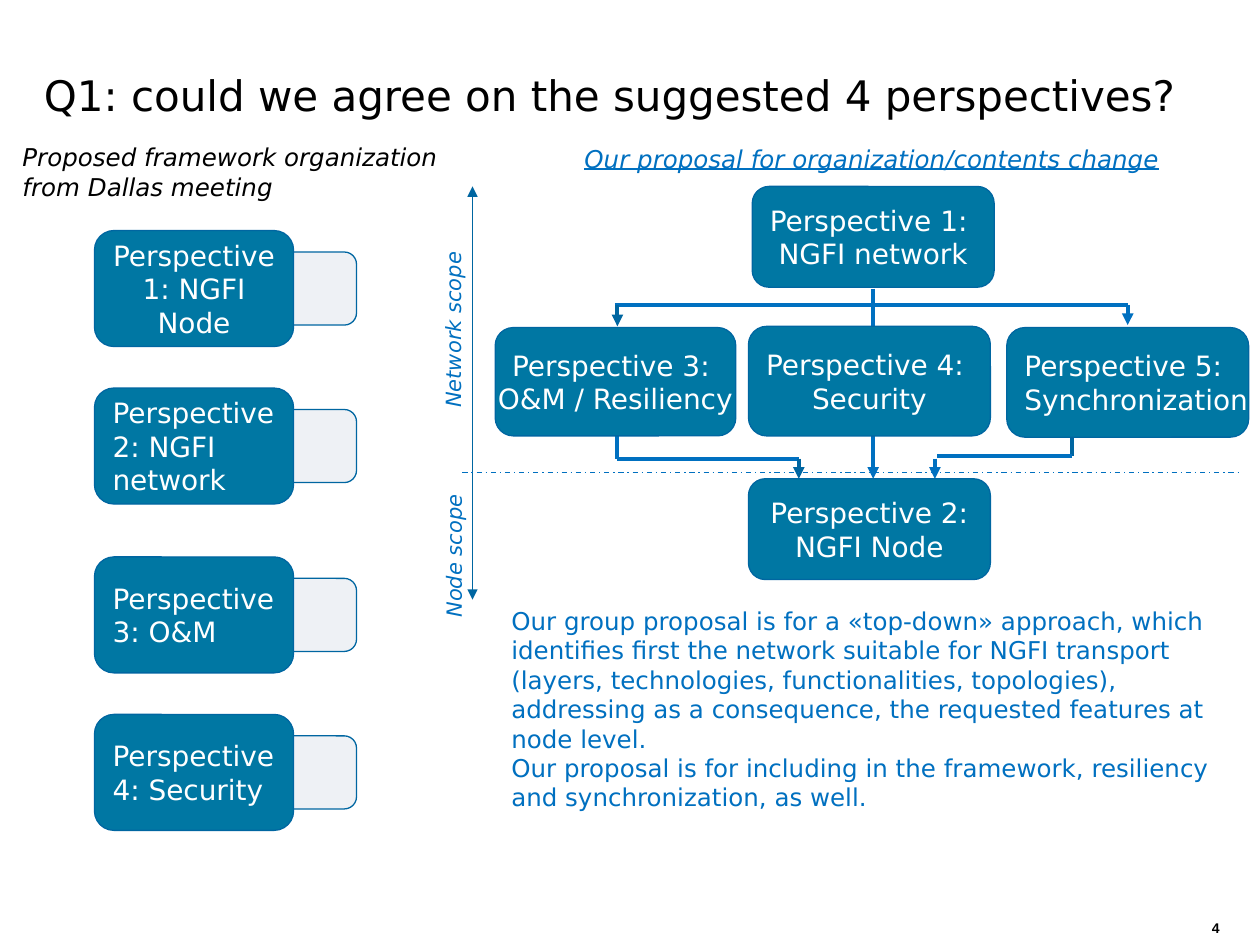
"""Build the slide that compares two ways of organizing the NGFI perspectives."""
from lxml import etree
from pptx import Presentation
from pptx.dml.color import RGBColor
from pptx.enum.dml import MSO_LINE
from pptx.enum.shapes import MSO_CONNECTOR, MSO_SHAPE
from pptx.enum.text import MSO_ANCHOR, PP_ALIGN
from pptx.oxml.ns import qn
from pptx.util import Pt

PX = 9144
BLACK = RGBColor(0x00, 0x00, 0x00)
WHITE = RGBColor(0xFF, 0xFF, 0xFF)
BLUE = RGBColor(0x00, 0x70, 0xC0)
NAVY = RGBColor(0x00, 0x66, 0xA1)
TEAL = RGBColor(0x00, 0x77, 0xA3)
PALE = RGBColor(0xEE, 0xF1, 0xF5)
LEFT, CENTER = PP_ALIGN.LEFT, PP_ALIGN.CENTER
TOP, MIDDLE, BOTTOM = MSO_ANCHOR.TOP, MSO_ANCHOR.MIDDLE, MSO_ANCHOR.BOTTOM
ROUNDED = MSO_SHAPE.ROUNDED_RECTANGLE
STRAIGHT = MSO_CONNECTOR.STRAIGHT
DASH_DOT = MSO_LINE.DASH_DOT

prs = Presentation()
prs.slide_width, prs.slide_height = 1000 * PX, 750 * PX
slide = prs.slides.add_slide(prs.slide_layouts[6])
shapes = slide.shapes


def write(shape, lines, size, color, aligns=(LEFT,), anchor=TOP, wrap=False,
          font="DejaVu Sans", italic=False):
    frame = shape.text_frame
    frame.word_wrap = wrap
    frame.vertical_anchor = anchor
    for i, line in enumerate(lines):
        paragraph = frame.paragraphs[0] if i == 0 else frame.add_paragraph()
        paragraph.text = line
        paragraph.alignment = aligns[min(i, len(aligns) - 1)]
        paragraph.font.name = font
        paragraph.font.size = Pt(size)
        paragraph.font.color.rgb = color
        paragraph.font.italic = italic
    return frame


def add_box(place, fill):
    box = shapes.add_shape(ROUNDED, *(v * PX for v in place))
    box.shadow.inherit = False
    box.fill.solid()
    box.fill.fore_color.rgb = fill
    box.line.color.rgb = NAVY
    box.line.width = Pt(0.75)
    return box


title = shapes.add_textbox(25 * PX, 17 * PX, 941 * PX, 83 * PX)
write(title, ["Q1: could we agree on the suggested 4 perspectives?"], 24, BLACK,
      anchor=BOTTOM, wrap=True)

page_number = shapes.add_textbox(952 * PX, 725 * PX, 48 * PX, 25 * PX)
write(page_number, ["4"], 8, BLACK, wrap=True, font="Arial").paragraphs[0].font.bold = True

dallas_heading = shapes.add_textbox(8 * PX, 108 * PX, 359 * PX, 57 * PX)
write(dallas_heading, ["Proposed framework organization", "from Dallas meeting"],
      14, BLACK, italic=True)

proposal_heading = shapes.add_textbox(447 * PX, 109 * PX, 490 * PX, 34 * PX)
write(proposal_heading, ["Our proposal for organization/contents change"], 14, BLUE,
      (CENTER,), italic=True).paragraphs[0].font.underline = True

dallas_perspectives = [
    (183, ["Perspective", "1: NGFI", "Node"], CENTER),
    (308, ["Perspective", "2: NGFI", "network"], LEFT),
    (442, ["Perspective", "3: O&M"], LEFT),
    (567, ["Perspective", "4: Security"], LEFT),
]
for top, lines, align in dallas_perspectives:
    add_box((183, top + 17, 100, 58), PALE)
    write(add_box((75, top, 158, 92), TEAL), lines, 16, WHITE, (align,), MIDDLE)

links = [
    (693, 229, 693, 380, BLUE, 2.25, True),
    (488, 242, 895, 242, BLUE, 2.25, False),
    (490, 242, 490, 259, NAVY, 2.25, True),
    (895, 242, 895, 258, BLUE, 2.25, True),
    (490, 364, 490, 346, BLUE, 2.25, False),
    (490, 364, 634, 364, BLUE, 2.25, False),
    (634, 364, 634, 380, NAVY, 2.25, True),
    (851, 362, 851, 346, NAVY, 2.25, False),
    (744, 362, 851, 362, BLUE, 2.25, False),
    (742, 364, 742, 380, BLUE, 2.25, True),
    (375, 375, 375, 148, NAVY, 0.75, True),
    (375, 375, 375, 476, NAVY, 0.75, True),
    (367, 375, 983, 375, BLUE, 0.75, False),
]
for *ends, color, width, arrow in links:
    link = shapes.add_connector(STRAIGHT, *(v * PX for v in ends))
    link.line.color.rgb = color
    link.line.width = Pt(width)
    if arrow:
        etree.SubElement(link.line._get_or_add_ln(), qn("a:tailEnd"), type="triangle")
    etree.SubElement(link._element.spPr, qn("a:effectLst"))
scope_divider = link
scope_divider.line.dash_style = DASH_DOT

proposed_perspectives = [
    ((597, 148, 192, 80), ["Perspective 1: ", "NGFI network"], CENTER),
    ((393, 260, 191, 86), ["Perspective 3: ", "O&M / Resiliency"], CENTER),
    ((594, 259, 192, 87), ["Perspective 4:", "Security"], LEFT),
    ((799, 260, 192, 87), ["Perspective 5:", "Synchronization"], LEFT),
    ((594, 380, 192, 80), ["Perspective 2:", "NGFI Node"], CENTER),
]
for place, lines, first_align in proposed_perspectives:
    write(add_box(place, TEAL), lines, 16, WHITE, (first_align, CENTER), MIDDLE)

for left, top, width, label in [(287, 246, 145, "Network scope"),
                                (301, 426, 118, "Node scope")]:
    scope = shapes.add_textbox(left * PX, top * PX, width * PX, 30 * PX)
    scope.rotation = 270
    write(scope, [label], 12, BLUE, italic=True)

rationale = shapes.add_textbox(396 * PX, 476 * PX, 594 * PX, 175 * PX)
write(rationale, [
    "Our group proposal is for a «top-down» approach, which identifies first the "
    "network suitable for NGFI transport (layers, technologies, functionalities, "
    "topologies), addressing as a consequence, the requested features at node level.",
    "Our proposal is for including in the framework, resiliency and synchronization, "
    "as well.",
], 14, BLUE, wrap=True)

prs.save("out.pptx")
